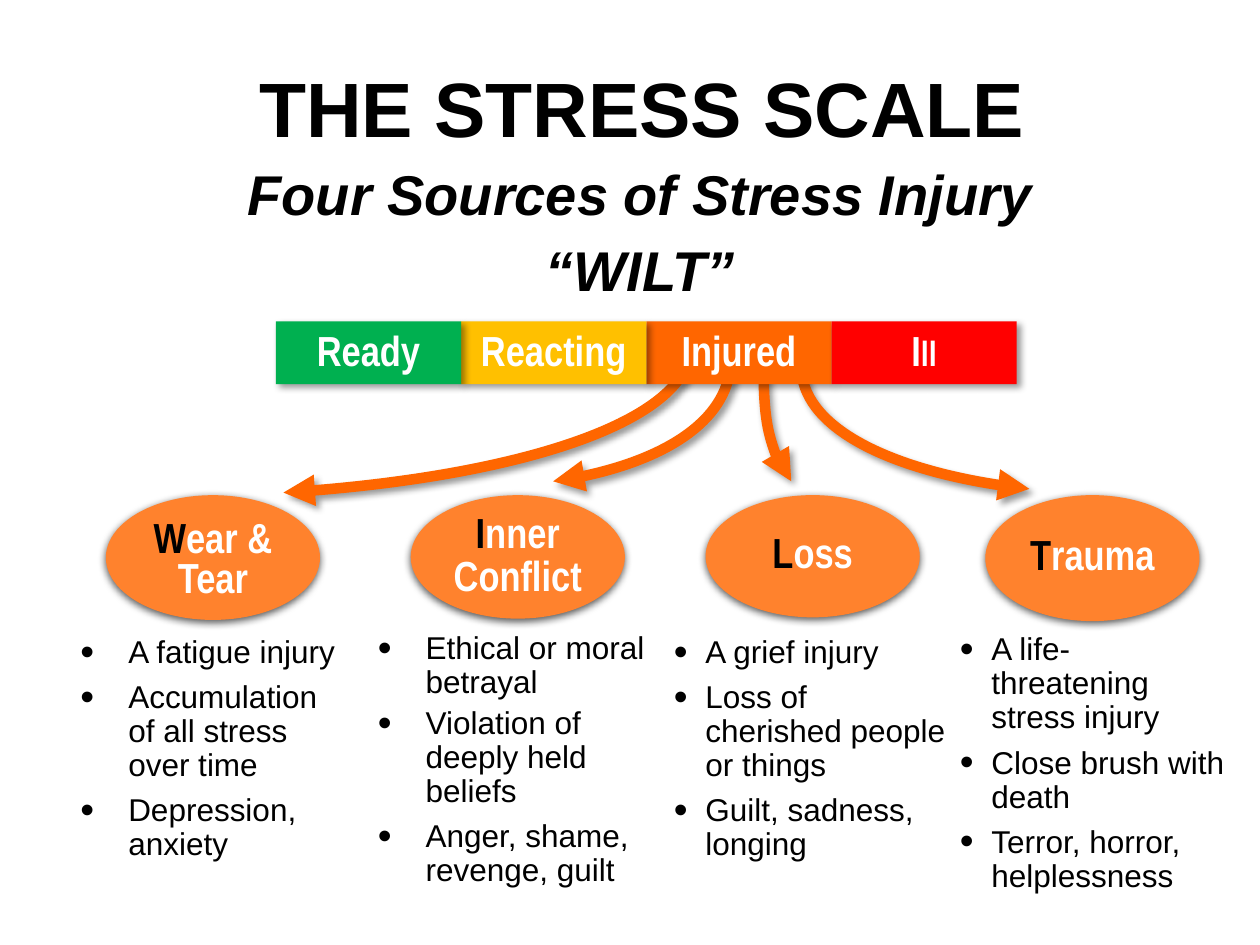
from dataclasses import dataclass

from lxml.etree import SubElement
from pptx import Presentation
from pptx.dml.color import RGBColor
from pptx.enum.shapes import MSO_SHAPE
from pptx.enum.text import MSO_ANCHOR, PP_ALIGN
from pptx.oxml.ns import qn
from pptx.util import Emu, Pt

PX = 9144
COLORS = {
    "black": "000000",
    "white": "FFFFFF",
    "ready": "00B050",
    "reacting": "FFC000",
    "injured": "FF6600",
    "ill": "FF0000",
    "source": "FF822D",
}


@dataclass(frozen=True)
class Box:
    left: int
    top: int
    width: int
    height: int

    def emu(self) -> tuple:
        return tuple(Emu(value * PX) for value in (self.left, self.top, self.width, self.height))


@dataclass(frozen=True)
class Shadow:
    alpha: int
    blur: float
    distance: float
    degrees: int


@dataclass(frozen=True)
class Heading:
    text: str
    box: Box
    size: int
    italic: bool
    line_spacing: float


@dataclass(frozen=True)
class Stage:
    initial: str
    rest: str
    rest_size: int
    color: str


@dataclass(frozen=True)
class Source:
    lines: tuple
    oval: Box
    anchor: MSO_ANCHOR
    line_spacing: float
    bullets: tuple
    bullet_box: Box
    indent: int
    first_spaced: bool = True


SOFT_SHADOW = Shadow(40, 4, 3, 45)
OVAL_SHADOW = Shadow(63, 4.5, 1.5, 90)

HEADINGS = (
    Heading("Four Sources of Stress Injury", Box(79, 113, 858, 89), 32, True, 0.85),
    Heading("THE STRESS SCALE", Box(43, 28, 934, 123), 44, False, 0.9),
    Heading("“WILT”", Box(79, 173, 858, 89), 32, True, 0.85),
)

BAR = Box(219, 255, 147, 50)
STAGES = (
    Stage("R", "eady", 24, "ready"),
    Stage("R", "eacting", 24, "reacting"),
    Stage("I", "njured", 24, "injured"),
    Stage("I", "ll", 20, "ill"),
)

ARROWS = (
    ((628, 382), (615, 372), (606, 333), (606, 289), (606, 285), (606, 280), (606, 276)),
    ((817, 388), (711, 377), (636, 337), (636, 291), (636, 286), (637, 281), (638, 276)),
    ((439, 382), (522, 371), (580, 331), (580, 285), (580, 280), (580, 275), (578, 270)),
    ((225, 391), (415, 379), (548, 331), (548, 275), (548, 270), (546, 264), (544, 258)),
)

SOURCES = (
    Source(("Wear & Tear",), Box(84, 393, 170, 99), MSO_ANCHOR.BOTTOM, 0.8,
           ("A fatigue injury", "Accumulation of all stress over time", "Depression, anxiety"),
           Box(54, 500, 230, 195), 38),
    Source(("Inner", "Conflict"), Box(326, 393, 170, 98), MSO_ANCHOR.MIDDLE, 0.85,
           ("Ethical or moral betrayal", "Violation of deeply held beliefs",
            "Anger, shame, revenge, guilt"),
           Box(290, 497, 243, 218), 38, False),
    Source(("Loss",), Box(560, 393, 170, 97), MSO_ANCHOR.MIDDLE, 0.8,
           ("A grief injury", "Loss of cherished people or things", "Guilt, sadness, longing"),
           Box(525, 500, 239, 191), 25),
    Source(("Trauma",), Box(782, 393, 170, 100), MSO_ANCHOR.MIDDLE, 0.8,
           ("A life-threatening stress injury", "Close brush with death",
            "Terror, horror, helplessness"),
           Box(752, 498, 230, 222), 25),
)


def color(name: str) -> RGBColor:
    return RGBColor.from_string(COLORS[name])


def format_run(run, size: int, fill: str, name: str, bold: bool = True, italic: bool = False) -> None:
    run.font.size = Pt(size)
    run.font.name = name
    run.font.bold = bold
    run.font.italic = italic
    run.font.color.rgb = color(fill)


def add_shadow(shape, shadow: Shadow) -> None:
    shape.shadow.inherit = False
    effects = shape._element.spPr.find(qn("a:effectLst"))
    outer = SubElement(effects, qn("a:outerShdw"), blurRad=str(Pt(shadow.blur)),
                       dist=str(Pt(shadow.distance)), dir=str(shadow.degrees * 60000),
                       algn="ctr", rotWithShape="0")
    tint = SubElement(outer, qn("a:srgbClr"), val=COLORS["black"])
    SubElement(tint, qn("a:alpha"), val=str(shadow.alpha * 1000))


def add_filled(slide, kind: MSO_SHAPE, box: Box, fill: str, shadow: Shadow):
    shape = slide.shapes.add_shape(kind, *box.emu())
    shape.fill.solid()
    shape.fill.fore_color.rgb = color(fill)
    shape.line.fill.background()
    add_shadow(shape, shadow)
    shape.text_frame.word_wrap = True
    return shape


def write_label(paragraph, initial: str, rest: str, line_spacing: float) -> tuple:
    paragraph.text = initial
    paragraph.alignment = PP_ALIGN.CENTER
    paragraph.line_spacing = line_spacing
    ending = paragraph.add_run()
    ending.text = rest
    return paragraph.runs[0], ending


def add_heading(slide, heading: Heading) -> None:
    frame = slide.shapes.add_textbox(*heading.box.emu()).text_frame
    frame.word_wrap = True
    frame.vertical_anchor = MSO_ANCHOR.MIDDLE
    frame.text = heading.text
    paragraph = frame.paragraphs[0]
    paragraph.alignment = PP_ALIGN.CENTER
    paragraph.line_spacing = heading.line_spacing
    format_run(paragraph.runs[0], heading.size, "black", "Arial", italic=heading.italic)


def add_stage(slide, stage: Stage, index: int) -> None:
    box = Box(BAR.left + index * BAR.width, BAR.top, BAR.width, BAR.height)
    shape = add_filled(slide, MSO_SHAPE.RECTANGLE, box, stage.color, SOFT_SHADOW)
    shape.text_frame.vertical_anchor = MSO_ANCHOR.MIDDLE
    first, ending = write_label(shape.text_frame.paragraphs[0], stage.initial, stage.rest, 0.9)
    format_run(first, 24, "white", "Arial Narrow")
    format_run(ending, stage.rest_size, "white", "Arial Narrow")


def add_arrow(slide, points: tuple) -> None:
    builder = slide.shapes.build_freeform(*points[0], scale=PX)
    builder.add_line_segments(points[1:], close=False)
    shape = builder.convert_to_shape()
    shape.fill.background()
    shape.line.color.rgb = color("injured")
    shape.line.width = Pt(6)
    SubElement(shape.line._get_or_add_ln(), qn("a:headEnd"), type="triangle")
    add_shadow(shape, SOFT_SHADOW)
    outline = next(shape._element.iter(qn("a:path")))
    segments = outline.findall(qn("a:lnTo"))
    for start in range(0, len(segments), 3):
        curve = SubElement(outline, qn("a:cubicBezTo"))
        for segment in segments[start:start + 3]:
            curve.append(segment[0])
            outline.remove(segment)


def add_oval(slide, source: Source) -> None:
    shape = add_filled(slide, MSO_SHAPE.OVAL, source.oval, "source", OVAL_SHADOW)
    frame = shape.text_frame
    frame.margin_left = frame.margin_right = frame.margin_top = frame.margin_bottom = 0
    frame.vertical_anchor = source.anchor
    frame.text = "\n".join(source.lines)
    for index, (paragraph, line) in enumerate(zip(frame.paragraphs, source.lines)):
        first, ending = write_label(paragraph, line[0], line[1:], source.line_spacing)
        format_run(first, 24, "white" if index else "black", "Arial Narrow")
        format_run(ending, 24, "white", "Arial Narrow")


def add_bullets(slide, source: Source) -> None:
    frame = slide.shapes.add_textbox(*source.bullet_box.emu()).text_frame
    frame.word_wrap = True
    frame.text = "\n".join(source.bullets)
    for index, paragraph in enumerate(frame.paragraphs):
        spaced = index > 0 or source.first_spaced
        paragraph.line_spacing = 0.9
        paragraph.space_before = Pt(4 if spaced else 0)
        paragraph.space_after = Pt(2.3 if spaced else 0)
        properties = paragraph._p.get_or_add_pPr()
        properties.set("marL", str(source.indent * PX))
        properties.set("indent", str(-source.indent * PX))
        SubElement(properties, qn("a:buSzPct"), val="125000")
        SubElement(properties, qn("a:buFont"), typeface="Arial")
        SubElement(properties, qn("a:buChar"), char="•")
        format_run(paragraph.runs[0], 18, "black", "Arial", bold=False)


def main() -> None:
    """Build the stress scale slide and save it."""
    presentation = Presentation()
    presentation.slide_width = Emu(1000 * PX)
    presentation.slide_height = Emu(750 * PX)
    slide = presentation.slides.add_slide(presentation.slide_layouts[6])
    for points in ARROWS:
        add_arrow(slide, points)
    for source in SOURCES:
        add_oval(slide, source)
        add_bullets(slide, source)
    for index in (2, 1, 0, 3):
        add_stage(slide, STAGES[index], index)
    for heading in HEADINGS:
        add_heading(slide, heading)
    presentation.save("out.pptx")


if __name__ == "__main__":
    main()
